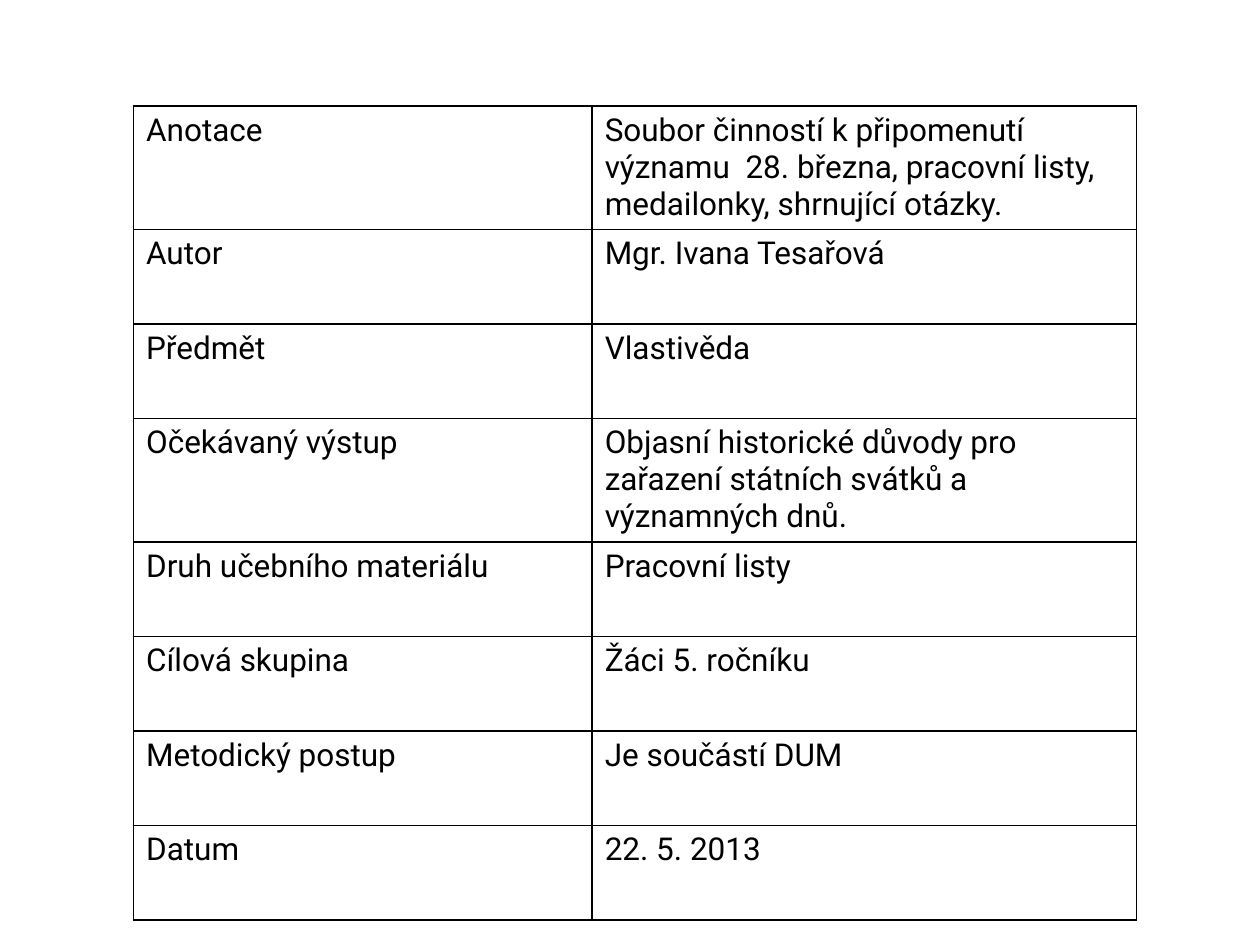
"""Build a slide with a two-column table describing a teaching material."""

from dataclasses import dataclass
from typing import NamedTuple

import pptx
import pptx.dml.color
import pptx.oxml
import pptx.oxml.ns
import pptx.table
import pptx.util


@dataclass(frozen=True)
class Theme:
    font: str = "Roboto"
    text_size: float = 18
    text_color: str = "000000"
    border_color: str = "000000"
    border_width: float = 1


@dataclass(frozen=True)
class TableGrid:
    left: float = 0.106
    top: float = 0.112
    columns: tuple[float, ...] = (0.364, 0.432)
    row_height: float = 0.1


class Entry(NamedTuple):
    label: str
    value: str


THEME = Theme()
GRID = TableGrid()
SLIDE_WIDTH = pptx.util.Inches(10)
SLIDE_HEIGHT = pptx.util.Inches(7.5)
ENTRIES = (
    Entry(
        "Anotace",
        "Soubor činností k připomenutí  významu  28. března, "
        "pracovní listy, medailonky, shrnující otázky.",
    ),
    Entry("Autor", "Mgr. Ivana Tesařová"),
    Entry("Předmět", "Vlastivěda"),
    Entry(
        "Očekávaný výstup",
        "Objasní historické důvody pro zařazení státních svátků a významných dnů.",
    ),
    Entry("Druh učebního materiálu", "Pracovní listy"),
    Entry("Cílová skupina", "Žáci 5. ročníku"),
    Entry("Metodický postup", "Je součástí DUM"),
    Entry("Datum", "22. 5. 2013"),
)


def across(share: float) -> pptx.util.Emu:
    return pptx.util.Emu(round(SLIDE_WIDTH * share))


def down(share: float) -> pptx.util.Emu:
    return pptx.util.Emu(round(SLIDE_HEIGHT * share))


def write_text(
    cell: pptx.table._Cell, text: str, *, font: str, size: float, color: str
) -> None:
    run = cell.text_frame.paragraphs[0].add_run()
    run.text = text
    run.font.name = font
    run.font.size = pptx.util.Pt(size)
    run.font.color.rgb = pptx.dml.color.RGBColor.from_string(color)


def draw_borders(cell: pptx.table._Cell, *, color: str, width: float) -> None:
    properties = cell._tc.get_or_add_tcPr()
    for position, side in enumerate(("lnL", "lnR", "lnT", "lnB")):
        border = pptx.oxml.parse_xml(
            f'<a:{side} {pptx.oxml.ns.nsdecls("a")} w="{pptx.util.Pt(width)}">'
            f'<a:solidFill><a:srgbClr val="{color}"/></a:solidFill></a:{side}>'
        )
        properties.insert(position, border)


def draw_cell(cell: pptx.table._Cell, text: str) -> None:
    cell.fill.background()
    draw_borders(cell, color=THEME.border_color, width=THEME.border_width)
    write_text(
        cell, text, font=THEME.font, size=THEME.text_size, color=THEME.text_color
    )


def main() -> None:
    presentation = pptx.Presentation()
    presentation.slide_width = SLIDE_WIDTH
    presentation.slide_height = SLIDE_HEIGHT
    slide = presentation.slides.add_slide(presentation.slide_layouts[6])

    table = slide.shapes.add_table(
        len(ENTRIES),
        len(GRID.columns),
        across(GRID.left),
        down(GRID.top),
        across(sum(GRID.columns)),
        down(GRID.row_height * len(ENTRIES)),
    ).table
    table.first_row = False
    table.horz_banding = False
    for column, share in zip(table.columns, GRID.columns):
        column.width = across(share)
    for row, entry in zip(table.rows, ENTRIES):
        row.height = down(GRID.row_height)
        for cell, text in zip(row.cells, entry):
            draw_cell(cell, text)

    presentation.save("out.pptx")


if __name__ == "__main__":
    main()
